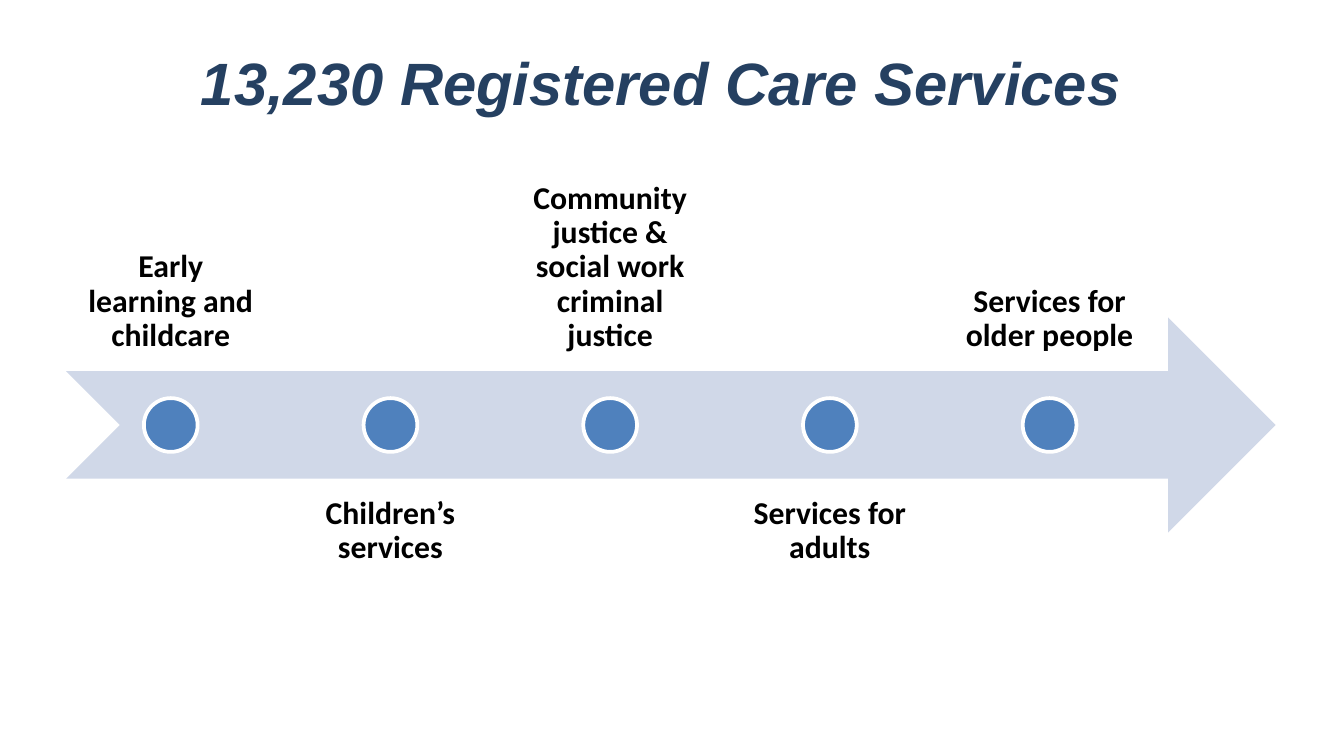
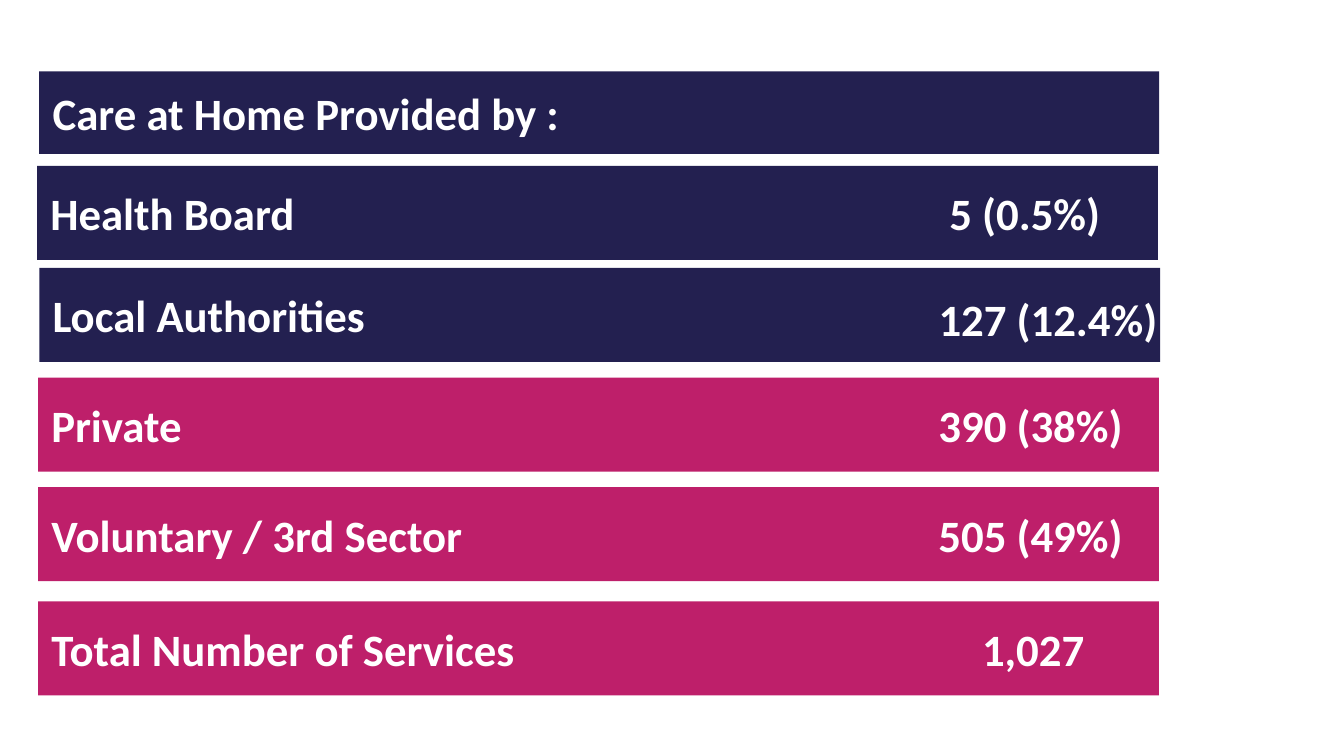
from dataclasses import dataclass
from typing import Optional

from pptx import Presentation
from pptx.dml.color import RGBColor
from pptx.enum.shapes import MSO_SHAPE
from pptx.enum.text import MSO_ANCHOR, MSO_AUTO_SIZE, PP_ALIGN
from pptx.util import Pt


@dataclass(frozen=True)
class TextStyle:
    font: str
    size: float
    color: RGBColor
    italic: bool = False
    align: PP_ALIGN = PP_ALIGN.LEFT
    anchor: MSO_ANCHOR = MSO_ANCHOR.MIDDLE
    inset_x: float = 7.2
    inset_y: float = 3.6
    line_spacing: float = 1.0


@dataclass(frozen=True)
class Theme:
    white: RGBColor = RGBColor(0xFF, 0xFF, 0xFF)
    black: RGBColor = RGBColor(0x00, 0x00, 0x00)
    title: RGBColor = RGBColor(0x25, 0x40, 0x61)
    arrow: RGBColor = RGBColor(0xD0, 0xD8, 0xE8)
    dot: RGBColor = RGBColor(0x4F, 0x81, 0xBD)
    navy: RGBColor = RGBColor(0x23, 0x20, 0x50)
    pink: RGBColor = RGBColor(0xBE, 0x1F, 0x6A)
    title_size: float = 32
    row_size: float = 24
    label_size: float = 17


THEME = Theme()
TITLE = TextStyle("Arial", THEME.title_size, THEME.title, italic=True,
                  align=PP_ALIGN.CENTER, anchor=MSO_ANCHOR.TOP)
ROW = TextStyle("Calibri", THEME.row_size, THEME.white)
LABEL_ABOVE = TextStyle("Calibri", THEME.label_size, THEME.black, align=PP_ALIGN.CENTER,
                        anchor=MSO_ANCHOR.BOTTOM, inset_x=9.6, inset_y=9.6, line_spacing=0.9)
LABEL_BELOW = TextStyle("Calibri", THEME.label_size, THEME.black, align=PP_ALIGN.CENTER,
                        anchor=MSO_ANCHOR.TOP, inset_x=9.6, inset_y=9.6, line_spacing=0.9)


@dataclass(frozen=True)
class Box:
    left: float
    top: float
    width: float
    height: float

    def points(self) -> tuple:
        return Pt(self.left), Pt(self.top), Pt(self.width), Pt(self.height)


@dataclass(frozen=True)
class Provider:
    name: str
    value: str
    left: float
    top: float
    color: RGBColor
    value_left: float
    value_top: float
    value_width: float


# Shared drawing helpers
def write(sp, text: str, style: TextStyle) -> None:
    tf = sp.text_frame
    tf.word_wrap = True
    tf.auto_size = MSO_AUTO_SIZE.NONE
    tf.vertical_anchor = style.anchor
    tf.margin_left = tf.margin_right = Pt(style.inset_x)
    tf.margin_top = tf.margin_bottom = Pt(style.inset_y)
    p = tf.paragraphs[0]
    p.text = text
    p.alignment = style.align
    p.line_spacing = style.line_spacing
    p.space_before = Pt(0)
    p.font.name = style.font
    p.font.size = Pt(style.size)
    p.font.bold = True
    p.font.italic = style.italic
    p.font.color.rgb = style.color


def add_text(s, box: Box, text: str, style: TextStyle) -> None:
    write(s.shapes.add_textbox(*box.points()), text, style)


def add_filled(s, kind: MSO_SHAPE, box: Box, fill: RGBColor,
               line: Optional[RGBColor] = None):
    sp = s.shapes.add_shape(kind, *box.points())
    sp.shadow.inherit = False
    sp.fill.solid()
    sp.fill.fore_color.rgb = fill
    if line is None:
        sp.line.fill.background()
    else:
        sp.line.color.rgb = line
        sp.line.width = Pt(2)
    return sp


def add_titled_slide(prs, title: str, box: Box, style: TextStyle):
    s = prs.slides.add_slide(prs.slide_layouts[5])
    sp = s.shapes.title
    sp.left, sp.top, sp.width, sp.height = box.points()
    write(sp, title, style)
    return s


# Slide 1: arrow with service types alternating above and below
SERVICES = [
    "Early learning and childcare",
    "Children’s services",
    "Community justice & social work criminal justice",
    "Services for adults",
    "Services for older people",
]
ARROW = Box(35.4, 170.1, 648, 115.2)
LABEL_WIDTH = 112.2
LABEL_STEP = 117.7
DOT = 28.8


def build_services(prs) -> None:
    s = add_titled_slide(prs, "13,230 Registered Care Services",
                         Box(31, 21, 646.6, 46), TITLE)
    add_filled(s, MSO_SHAPE.NOTCHED_RIGHT_ARROW, ARROW, THEME.arrow)
    middle = ARROW.top + ARROW.height / 2
    shaft_half = ARROW.height / 4
    for i, service in enumerate(SERVICES):
        left = ARROW.left + i * LABEL_STEP
        above = i % 2 == 0
        top = middle - shaft_half - ARROW.height if above else middle + shaft_half
        add_text(s, Box(left, top, LABEL_WIDTH, ARROW.height), service,
                 LABEL_ABOVE if above else LABEL_BELOW)
        dot = Box(left + (LABEL_WIDTH - DOT) / 2, middle - DOT / 2, DOT, DOT)
        add_filled(s, MSO_SHAPE.OVAL, dot, THEME.dot, THEME.white)


# Slide 2: one band per provider, with its count at the right
PROVIDERS = [
    Provider("Health Board", "5 (0.5%)", 19.9, 88.9, THEME.navy, 501.5, 88.9, 114.5),
    Provider("Local Authorities", "127 (12.4%)", 21.1, 143.5, THEME.navy, 495.7, 145.4, 142),
    Provider("Private", "390 (38%)", 20.4, 202.3, THEME.pink, 495.7, 202.3, 120.2),
    Provider("Voluntary / 3rd Sector", "505 (49%)", 20.4, 261, THEME.pink, 495.7, 261, 120.2),
    Provider("Total Number of Services", "1,027", 20.4, 322.2, THEME.pink, 519, 322.2, 97.2),
]
BAND_WIDTH = 600.5
BAND_HEIGHT = 50.4


def build_providers(prs) -> None:
    s = add_titled_slide(prs, "Care at Home Provided by :", Box(21, 38.2, 600, 44.2), ROW)
    s.shapes.title.fill.solid()
    s.shapes.title.fill.fore_color.rgb = THEME.navy
    for row in PROVIDERS:
        band = Box(row.left, row.top, BAND_WIDTH, BAND_HEIGHT)
        write(add_filled(s, MSO_SHAPE.RECTANGLE, band, row.color), row.name, ROW)
        add_text(s, Box(row.value_left, row.value_top, row.value_width, BAND_HEIGHT),
                 row.value, ROW)


def main() -> None:
    prs = Presentation()
    prs.slide_width, prs.slide_height = Pt(720), Pt(405)
    build_services(prs)
    build_providers(prs)
    prs.save("out.pptx")


if __name__ == "__main__":
    main()
